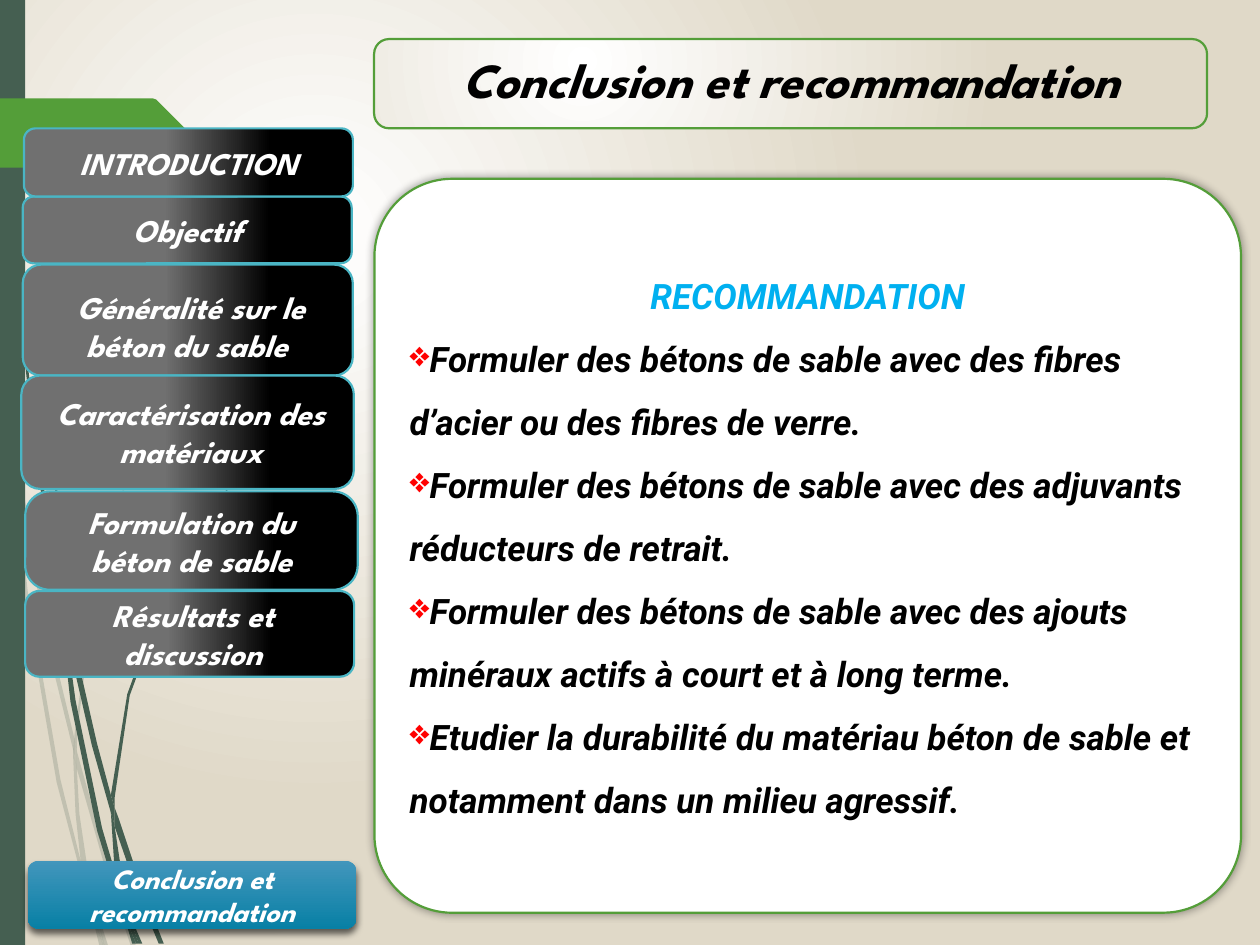
"""Build the conclusion and recommendations slide with its chapter navigation."""
from dataclasses import dataclass

from lxml import etree
from pptx import Presentation
from pptx.dml.color import RGBColor
from pptx.enum.shapes import MSO_SHAPE
from pptx.enum.text import MSO_ANCHOR, PP_ALIGN
from pptx.oxml.ns import qn
from pptx.util import Pt

RECTANGLE = MSO_SHAPE.RECTANGLE
ROUNDED = MSO_SHAPE.ROUNDED_RECTANGLE
TOP, MIDDLE = MSO_ANCHOR.TOP, MSO_ANCHOR.MIDDLE
LEFT, CENTER = PP_ALIGN.LEFT, PP_ALIGN.CENTER
OUTLINE_UNIT = Pt(0.72)


@dataclass(frozen=True)
class Theme:
    heading_font: str = "League Spartan"
    body_font: str = "Roboto"
    title_size: float = 28
    body_size: float = 20
    button_size: float = 18
    active_size: float = 16
    line_width: float = 1.25
    white: str = "FFFFFF"
    black: str = "000000"
    sand: str = "E0D9C8"
    pine: str = "455F51"
    green: str = "549E39"
    teal: str = "4AB5C4"
    gray: str = "707070"
    blue_light: str = "4296BC"
    blue_dark: str = "0880A5"
    sky: str = "00B0F0"
    red: str = "FF0000"


THEME = Theme()

PALE_STALKS = [
    [(8, 350), (6, 322), (0, 282), (0, 299), (7, 344)],
    [(40, 522), (59, 599), (59, 586), (43, 520), (10, 345), (12, 376)],
    [(64, 607), (61, 596), (61, 610), (85, 694), (104, 751), (108, 751), (88, 692)],
    [(83, 751), (86, 751), (73, 711)],
    [(64, 683), (48, 619), (22, 469), (12, 376), (8, 350), (19, 470), (45, 621),
     (64, 693), (70, 714), (69, 707)],
    [(58, 599), (60, 646), (64, 683), (67, 692), (73, 711), (72, 706), (63, 646),
     (61, 610), (61, 608)],
    [(61, 584), (76, 462), (111, 349), (159, 245), (187, 198), (201, 175), (217, 154),
     (217, 153), (201, 175), (186, 197), (158, 244), (110, 348), (75, 461), (59, 584),
     (59, 586), (61, 596)],
    [(70, 714), (79, 751), (82, 751)],
    [(61, 608), (61, 610), (61, 596), (59, 586), (58, 599)],
    [(67, 692), (65, 683), (69, 707), (70, 714), (82, 751), (83, 751), (73, 711)],
]
DARK_STALKS = [
    [(5, 110), (14, 233), (27, 355), (46, 477), (47, 481), (45, 457), (45, 453),
     (30, 355), (15, 232), (6, 109), (4, 48), (3, 0), (2, 0), (3, 48)],
    [(73, 592), (88, 645), (88, 633), (88, 631), (77, 590), (50, 472), (53, 505)],
    [(94, 649), (91, 641), (91, 656), (109, 708), (126, 749), (130, 749), (113, 706)],
    [(91, 691), (81, 657), (60, 556), (53, 505), (47, 477), (56, 557), (77, 659),
     (92, 708), (97, 722), (96, 717)],
    [(50, 472), (48, 453), (44, 349), (48, 245), (52, 193), (58, 141), (51, 193),
     (47, 245), (43, 349), (45, 449), (49, 472)],
    [(110, 749), (113, 749), (100, 719)],
    [(47, 477), (53, 505), (50, 472), (49, 472), (45, 449), (45, 453)],
    [(91, 633), (103, 552), (131, 476), (169, 406), (191, 374), (203, 359), (216, 344),
     (215, 344), (203, 358), (191, 373), (168, 405), (129, 474), (101, 551), (88, 631),
     (91, 641)],
    [(97, 722), (105, 749), (108, 749)],
    [(88, 645), (91, 691), (96, 706), (100, 719), (100, 716), (91, 656), (90, 651)],
    [(88, 645), (90, 651), (91, 656), (91, 641), (88, 631), (88, 633)],
    [(96, 706), (91, 691), (96, 717), (97, 722), (108, 749), (110, 749), (100, 719)],
]
TAG = [(149, 107), (124, 132), (121, 133), (0, 133), (0, 78), (121, 78), (124, 79),
       (149, 104), (149.5, 105.5)]

BUTTONS = [
    ("Formulation du béton de sable", (14.4, 280.8, 190, 56.2), 0.25, 0, 3.6),
    ("Résultats et discussion", (14.4, 337.7, 188, 49), 0.167, 3.6, 3.6),
    ("Objectif", (13, 112.3, 188, 38.2), 0.167, 0, 3.6),
    ("Généralité sur le béton du sable ", (13, 151.2, 188.6, 63.4), 0.167, 3.6, 10.6),
    ("Caractérisation des matériaux", (12.2, 214.6, 190, 64.8), 0.167, 3.6, 3.6),
    ("INTRODUCTION", (13.7, 73.4, 188, 38.9), 0.167, 0, 3.6),
]
RECOMMENDATIONS = [
    ("Formuler des bétons de sable avec des fibres d’acier ou des fibres de verre.", -42.5),
    ("Formuler des bétons de sable avec des adjuvants réducteurs de retrait.", -42.5),
    ("Formuler des bétons de sable avec des ajouts minéraux actifs à court et à long terme.",
     -27.4),
    ("Etudier la durabilité du matériau béton de sable et notamment dans un milieu agressif.",
     -27.4),
]


def rgb(color):
    return RGBColor.from_string(color)


def add_node(parent, tag, **attributes):
    return etree.SubElement(parent, qn(tag), {key: str(value) for key, value in attributes.items()})


def fill_solid(shape, color, opacity=100):
    shape.fill.solid()
    shape.fill.fore_color.rgb = rgb(color)
    if opacity < 100:
        for node in shape._element.spPr.iter(qn("a:srgbClr")):
            add_node(node, "a:alpha", val=opacity * 1000)


def fill_gradient(fill, stops, angle=0):
    fill.gradient()
    fill.gradient_angle = angle
    for stop, (position, color) in zip(fill.gradient_stops, stops):
        stop.position = position
        stop.color.rgb = rgb(color)


def make_radial(element):
    linear = next(element.iter(qn("a:lin")))
    radial = etree.Element(qn("a:path"), path="circle")
    add_node(radial, "a:fillToRect", l=50000, t=50000, r=100000, b=100000)
    linear.getparent().replace(linear, radial)


def add_box(slide, kind, box, line=None, corner=None):
    shape = slide.shapes.add_shape(kind, *(Pt(length) for length in box))
    if corner is not None:
        shape.adjustments[0] = corner
    if line:
        shape.line.color.rgb = rgb(line)
        shape.line.width = Pt(THEME.line_width)
    else:
        shape.line.fill.background()
    shape.shadow.inherit = False
    return shape


def add_outline(slide, points, color, opacity=100):
    builder = slide.shapes.build_freeform(*points[0], scale=OUTLINE_UNIT)
    builder.add_line_segments(points[1:], close=True)
    shape = builder.convert_to_shape()
    fill_solid(shape, color, opacity)
    shape.line.fill.background()
    shape.shadow.inherit = False


def add_shadow(shape, opacity, blur, distance, angle):
    effects = shape._element.spPr.find(qn("a:effectLst"))
    shadow = add_node(effects, "a:outerShdw", blurRad=Pt(blur), dist=Pt(distance),
                      dir=angle * 60000, rotWithShape=0)
    color = add_node(shadow, "a:srgbClr", val=THEME.black)
    add_node(color, "a:alpha", val=opacity * 1000)


def write(paragraph, text, font, size, color, alignment=CENTER):
    paragraph.alignment = alignment
    run = paragraph.add_run()
    run.text = text
    run.font.name = font
    run.font.size = Pt(size)
    run.font.bold = run.font.italic = True
    run.font.color.rgb = rgb(color)


def set_bullet(paragraph, indent):
    properties = paragraph._p.get_or_add_pPr()
    properties.set("marL", "0")
    properties.set("indent", str(Pt(indent)))
    add_node(add_node(properties, "a:buClr"), "a:srgbClr", val=THEME.red)
    add_node(properties, "a:buChar", char="❖")


def add_backdrop(slide):
    fill_gradient(slide.background.fill, [(0, THEME.white), (0.72, THEME.sand)])
    make_radial(slide._element)
    for stalks, opacity in ((PALE_STALKS, 20), (DARK_STALKS, 100)):
        for points in stalks:
            add_outline(slide, points, THEME.pine, opacity)
    fill_solid(add_box(slide, RECTANGLE, (0, 0, 14.4, 540)), THEME.pine)
    add_outline(slide, TAG, THEME.green)


def add_title(slide):
    shape = add_box(slide, ROUNDED, (213.8, 22.3, 476, 51), THEME.green, 0.167)
    fill_gradient(shape.fill, [(0, THEME.white), (1, THEME.sand)])
    make_radial(shape._element)
    shape.text_frame.vertical_anchor = TOP
    write(shape.text_frame.paragraphs[0], "Conclusion et recommandation",
          THEME.heading_font, THEME.title_size, THEME.black)


def add_panel(slide):
    shape = add_box(slide, ROUNDED, (214, 102.2, 495.2, 419.4), THEME.green, 0.106)
    fill_solid(shape, THEME.white)
    add_shadow(shape, 40, 5, 0, 0)
    frame = shape.text_frame
    frame.vertical_anchor = MIDDLE
    frame.margin_bottom = Pt(14)
    heading = frame.paragraphs[0]
    heading.line_spacing = 1.5
    write(heading, "RECOMMANDATION", THEME.body_font, THEME.body_size, THEME.sky)
    for text, indent in RECOMMENDATIONS:
        paragraph = frame.add_paragraph()
        paragraph.line_spacing = 1.5
        set_bullet(paragraph, indent)
        write(paragraph, text, THEME.body_font, THEME.body_size, THEME.black, LEFT)


def add_button(slide, text, box, corner, indent, top_margin):
    shape = add_box(slide, ROUNDED, box, THEME.teal, corner)
    fill_gradient(shape.fill, [(0.43, THEME.gray), (0.75, THEME.black)])
    shape.text_frame.margin_top = Pt(top_margin)
    paragraph = shape.text_frame.paragraphs[0]
    paragraph._p.get_or_add_pPr().set("marL", str(Pt(indent)))
    write(paragraph, text, THEME.heading_font, THEME.button_size, THEME.white)


def add_active_button(slide):
    shape = add_box(slide, ROUNDED, (15.8, 491.8, 188, 38.9), corner=0.167)
    fill_gradient(shape.fill, [(0, THEME.blue_light), (1, THEME.blue_dark)], 270)
    add_shadow(shape, 60, 4, 3, 90)
    write(shape.text_frame.paragraphs[0], "Conclusion et recommandation",
          THEME.heading_font, THEME.active_size, THEME.white)


def main():
    presentation = Presentation()
    presentation.slide_width, presentation.slide_height = Pt(720), Pt(540)
    slide = presentation.slides.add_slide(presentation.slide_layouts[6])
    add_backdrop(slide)
    add_title(slide)
    add_panel(slide)
    add_active_button(slide)
    for button in BUTTONS:
        add_button(slide, *button)
    presentation.save("out.pptx")


if __name__ == "__main__":
    main()
